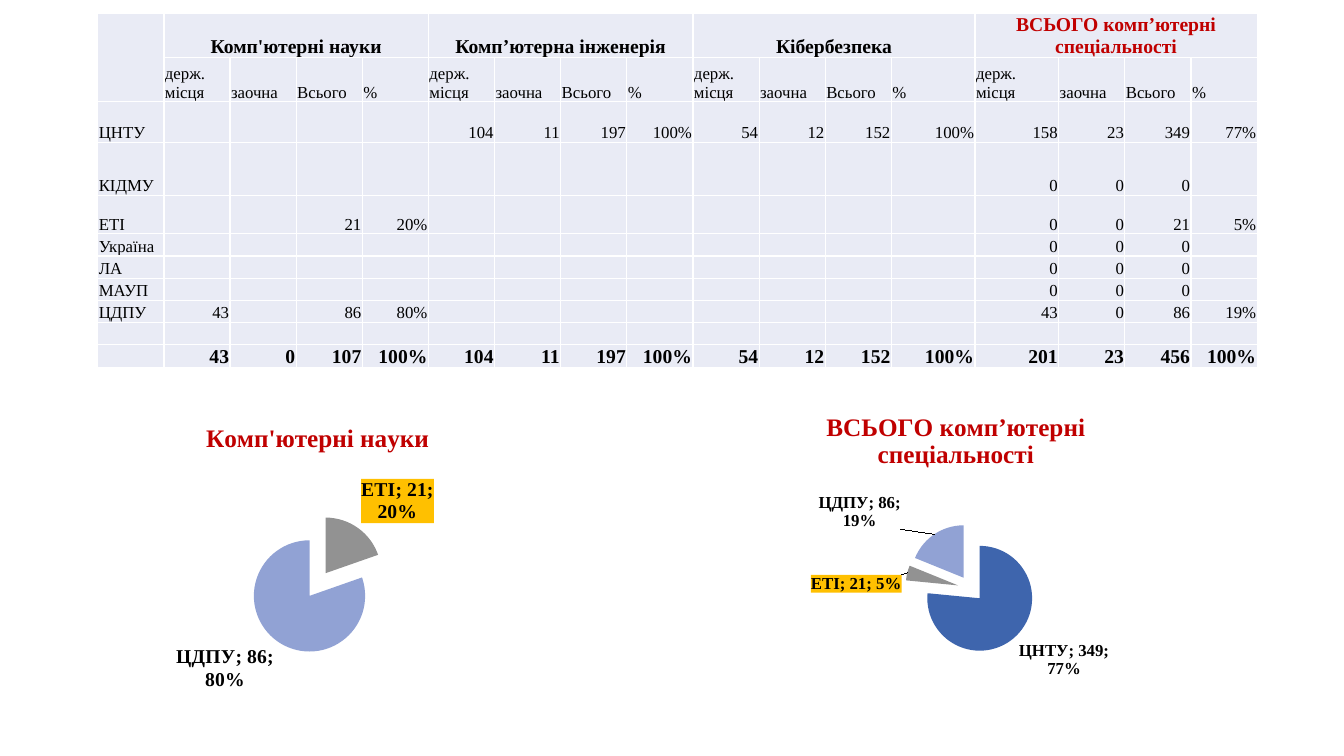
from lxml import etree
from pptx import Presentation, util as u
from pptx.chart.data import CategoryChartData
from pptx.dml.color import RGBColor
from pptx.enum import chart as ch, text
from pptx.oxml import parse_xml
from pptx.oxml.ns import qn

THEME = dict(font="Times New Roman", base="Calibri", black="000000", red="C00000",
             cell="E9EBF5", gold="FFC000", blue="3E65AD", grey="929292", light="91A2D4",
             body=12, head=14, title=18, small=10)

GROUPS = ["Комп'ютерні науки", "Комп’ютерна інженерія", "Кібербезпека",
          "ВСЬОГО комп’ютерні спеціальності"]
FIELDS = ["держ. місця", "заочна", "Всього", "%"]
NONE = [""] * 4
ZERO = ["0", "0", "0", ""]
ROWS = [
    ("ЦНТУ", NONE, ["104", "11", "197", "100%"], ["54", "12", "152", "100%"],
     ["158", "23", "349", "77%"]),
    ("КІДМУ", NONE, NONE, NONE, ZERO),
    ("ЕТІ", ["", "", "21", "20%"], NONE, NONE, ["0", "0", "21", "5%"]),
    ("Україна", NONE, NONE, NONE, ZERO),
    ("ЛА", NONE, NONE, NONE, ZERO),
    ("МАУП", NONE, NONE, NONE, ZERO),
    ("ЦДПУ", ["43", "", "86", "80%"], NONE, NONE, ["43", "0", "86", "19%"]),
    ("", NONE, NONE, NONE, NONE),
    ("", ["43", "0", "107", "100%"], ["104", "11", "197", "100%"],
     ["54", "12", "152", "100%"], ["201", "23", "456", "100%"]),
]
HEIGHTS = [0.44, 0.44, 0.4, 0.53, 0.38] + [0.22] * 6
TABLE_BOX = (0.97, 0.13, 11.5, sum(HEIGHTS))
WIDE, WIDE_COLS = 0.83, (12, 13)

SLICES = {"ЦНТУ": "blue", "ЕТІ": "grey", "ЦДПУ": "light"}
HIGHLIGHT = "ЕТІ"
CHARTS = [
    dict(title=GROUPS[0], values=[None, None, 21, None, None, None, 86],
         box=(0.65, 4.03, 5, 3), plot=(0.36, 0.36, 0.28, 0.46), size="head", shifts={}),
    dict(title=GROUPS[3], values=[349, None, 21, None, None, None, 86],
         box=(6.98, 3.92, 5, 3), plot=(0.4, 0.42, 0.26, 0.44), size="body",
         shifts={"ЕТІ": (0, 0.07), "ЦДПУ": (-0.06, 0)}),
]
EXPLOSION = "25"
C_NS = "http://schemas.openxmlformats.org/drawingml/2006/chart"
A_NS = "http://schemas.openxmlformats.org/drawingml/2006/main"


def set_font(font, size, color="black", bold=False, name="font"):
    values = dict(size=u.Pt(THEME[size]), bold=bold, name=THEME[name])
    for key, value in values.items():
        setattr(font, key, value)
    font.color.rgb = RGBColor.from_string(THEME[color])


def fill_cell(cell, words, align, size="body", **look):
    cell.fill.solid()
    cell.fill.fore_color.rgb = RGBColor.from_string(THEME["cell"])
    edge = u.Inches(0.01)
    for key, value in dict(margin_left=edge, margin_right=edge, margin_top=edge,
                           margin_bottom=0, vertical_anchor=text.MSO_ANCHOR.BOTTOM).items():
        setattr(cell, key, value)
    p = cell.text_frame.paragraphs[0]
    p.alignment = align
    if words:
        r = p.add_run()
        r.text = words
        set_font(r.font, size, **look)
    else:
        p._p.get_or_add_endParaRPr().set("sz", str(THEME[size] * 100))


def add_totals_table(s):
    n_cols = 1 + len(GROUPS) * len(FIELDS)
    table = s.shapes.add_table(len(HEIGHTS), n_cols, *map(u.Inches, TABLE_BOX)).table
    table.first_row = table.horz_banding = False
    narrow = (TABLE_BOX[2] - WIDE * len(WIDE_COLS)) / (n_cols - len(WIDE_COLS))
    for i, col in enumerate(table.columns):
        col.width = u.Inches(WIDE if i in WIDE_COLS else narrow)
    for row, height in zip(table.rows, HEIGHTS):
        row.height = u.Inches(height)
    left, center, right = (text.PP_ALIGN.LEFT, text.PP_ALIGN.CENTER, text.PP_ALIGN.RIGHT)
    table.cell(0, 0).merge(table.cell(1, 0))
    fill_cell(table.cell(0, 0), "", left)
    for g, name in enumerate(GROUPS):
        first = 1 + g * len(FIELDS)
        table.cell(0, first).merge(table.cell(0, first + len(FIELDS) - 1))
        fill_cell(table.cell(0, first), name, center, "head", bold=True,
                  color="red" if name == GROUPS[-1] else "black")
        for f, field in enumerate(FIELDS):
            fill_cell(table.cell(1, first + f), field, left)
    for i, (name, *groups) in enumerate(ROWS, 2):
        total = i == len(HEIGHTS) - 1
        fill_cell(table.cell(i, 0), name, left)
        for j, value in enumerate(sum(groups, []), 1):
            fill_cell(table.cell(i, j), value, right, "head" if total else "body", bold=total)


def layout_xml(x, y, w=None, h=None):
    tags = []
    if w is not None:
        tags = [("layoutTarget", "inner"), ("xMode", "edge"), ("yMode", "edge")]
    tags += [("x", x), ("y", y)]
    if w is not None:
        tags += [("w", w), ("h", h)]
    inner = "".join(f'<c:{tag} val="{value}"/>' for tag, value in tags)
    return parse_xml(f'<c:layout xmlns:c="{C_NS}"><c:manualLayout>{inner}'
                     '</c:manualLayout></c:layout>')


def explosion():
    element = etree.Element(qn("c:explosion"))
    element.set("val", EXPLOSION)
    return element


def label_slice(point, name, size, shift):
    label = point.data_label
    set_font(label.font, size, bold=True)
    label.position = ch.XL_LABEL_POSITION.OUTSIDE_END
    dlbl = label._dLbl
    for flag in ("showVal", "showCatName", "showPercent"):
        dlbl.find(qn(f"c:{flag}")).set("val", "1")
    separator = etree.SubElement(dlbl, qn("c:separator"))
    separator.text = "; "
    if name == HIGHLIGHT:
        dlbl.find(qn("c:txPr")).addprevious(parse_xml(
            f'<c:spPr xmlns:c="{C_NS}" xmlns:a="{A_NS}"><a:solidFill>'
            f'<a:srgbClr val="{THEME["gold"]}"/></a:solidFill></c:spPr>'))
    if shift:
        dlbl.insert(1, layout_xml(*shift))


def add_pie(s, title, values, box, plot, size, shifts):
    names = [row[0] for row in ROWS[:len(values)]]
    data = CategoryChartData()
    data.categories = names
    data.add_series(title, values)
    chart = s.shapes.add_chart(ch.XL_CHART_TYPE.PIE, *map(u.Inches, box), data).chart
    set_font(chart.font, "small", name="base")
    chart.has_legend = False
    chart.has_title = True
    tf = chart.chart_title.text_frame
    tf.text = title
    set_font(tf.paragraphs[0].runs[0].font, "title", "red", True)
    area = chart._chartSpace.chart.plotArea
    for old in area.findall(qn("c:layout")):
        area.remove(old)
    area.insert(0, layout_xml(*plot))
    chart.plots[0].vary_by_categories = True
    series = chart.plots[0].series[0]
    for i, (name, value) in enumerate(zip(names, values)):
        if value is None:
            continue
        point = series.points[i]
        point.format.fill.solid()
        point.format.fill.fore_color.rgb = RGBColor.from_string(THEME[SLICES[name]])
        label_slice(point, name, size, shifts.get(name))
    slices = series._element.findall(qn("c:dPt"))
    for dpt in slices:
        dpt.find(qn("c:spPr")).addprevious(explosion())
    slices[0].addprevious(explosion())


def main():
    prs = Presentation()
    prs.slide_width, prs.slide_height = u.Inches(13.33), u.Inches(7.5)
    s = prs.slides.add_slide(prs.slide_layouts[6])
    add_totals_table(s)
    for pie in CHARTS:
        add_pie(s, **pie)
    prs.save("out.pptx")


if __name__ == "__main__":
    main()
